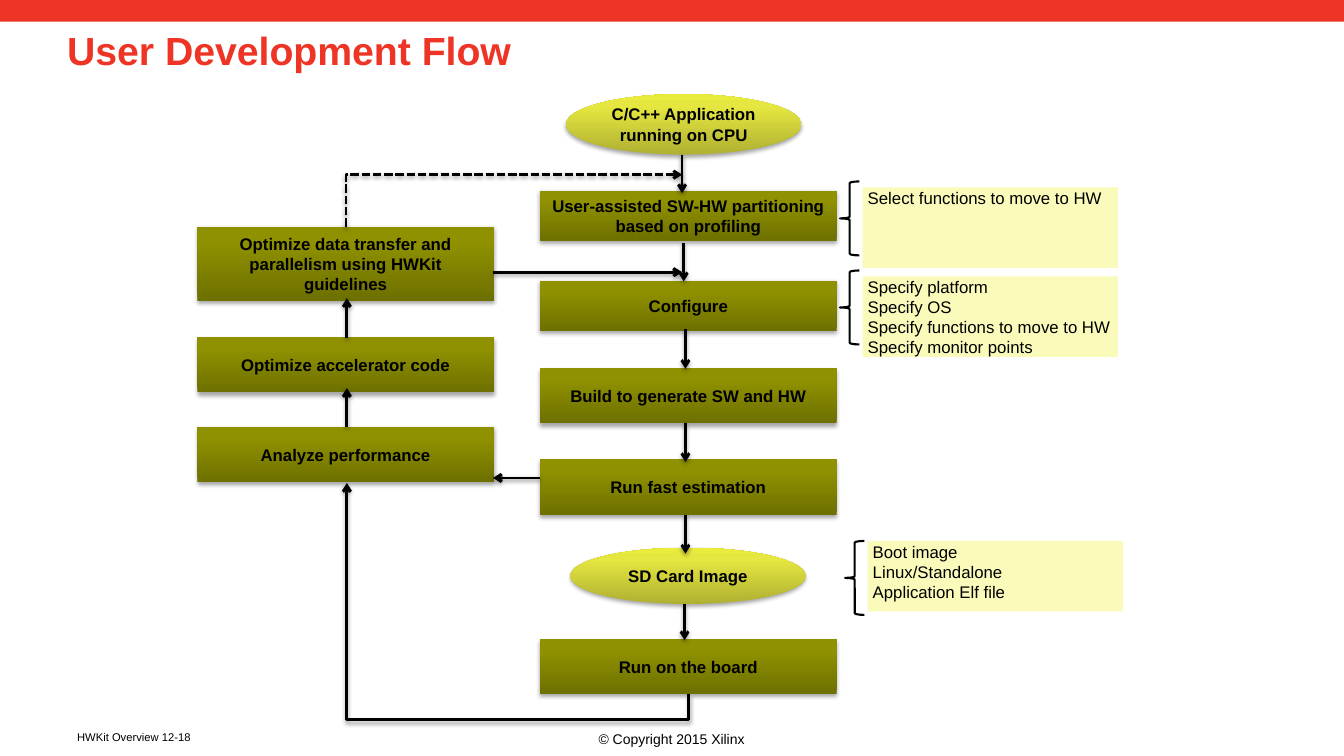
from lxml.etree import SubElement
from pptx import Presentation
from pptx.dml.color import RGBColor
from pptx.enum.dml import MSO_LINE
from pptx.enum.shapes import MSO_CONNECTOR, MSO_SHAPE
from pptx.enum.text import MSO_ANCHOR, PP_ALIGN
from pptx.oxml.ns import qn
from pptx.util import Inches, Pt

COLUMNS, ROWS = 160, 90
CELL = Inches(1) / 12
COLORS = {"red": "EE3424", "black": "000000", "note": "FAFBBB"}
GRADIENTS = {
    "step": [(0, "6E7000"), (80, "8F9100"), (100, "909200")],
    "artifact": [(0, "B0B131"), (80, "E5E640"), (100, "E9EB3D")],
}


def cells(*values):
    """Turn grid cells into slide lengths."""
    return [round(value * CELL) for value in values]


def color(name):
    return RGBColor.from_string(COLORS[name])


class FlowSlide:
    """Draws the flow chart's elements on one slide, measured in grid cells."""

    font = "Arial"

    def __init__(self, slide):
        self.slide = slide

    def set_text(self, frame, text, size, ink="black", bold=False, align=PP_ALIGN.LEFT):
        frame.text = text
        for para in frame.paragraphs:
            para.alignment = align
            for span in para.runs:
                span.font.name = self.font
                span.font.size = Pt(size)
                span.font.bold = bold
                span.font.color.rgb = color(ink)

    def text(self, place, text, size, inset=0.1, anchor=MSO_ANCHOR.TOP, wrap=True, **style):
        frame = self.slide.shapes.add_textbox(*cells(*place)).text_frame
        frame.word_wrap = wrap
        frame.margin_left = Inches(inset)
        frame.vertical_anchor = anchor
        self.set_text(frame, text, size, **style)
        return frame

    def shape(self, kind, place, fill=None):
        shape = self.slide.shapes.add_shape(kind, *cells(*place))
        shape.shadow.inherit = False
        shape.line.fill.background()
        if fill:
            shape.fill.solid()
            shape.fill.fore_color.rgb = color(fill)
        else:
            shape.fill.background()
        return shape

    def drop_shadow(self, properties, alpha, distance):
        effects = properties.find(qn("a:effectLst"))
        if effects is None:
            effects = SubElement(properties, qn("a:effectLst"))
        shadow = SubElement(effects, qn("a:outerShdw"), blurRad=str(Pt(3.1)),
                            dist=str(Pt(distance)), dir="5400000", rotWithShape="0")
        ink = SubElement(shadow, qn("a:srgbClr"), val=COLORS["black"])
        SubElement(ink, qn("a:alpha"), val=str(alpha * 1000))

    def node(self, kind, place, text, gradient):
        node = self.shape(kind, place)
        node.fill.gradient()
        node.fill.gradient_angle = 90
        properties = node._element.spPr
        stops = properties.find(qn("a:gradFill")).find(qn("a:gsLst"))
        for stop in list(stops):
            stops.remove(stop)
        for position, tone in GRADIENTS[gradient]:
            stop = SubElement(stops, qn("a:gs"), pos=str(position * 1000))
            SubElement(stop, qn("a:srgbClr"), val=tone)
        self.drop_shadow(properties, 35, 1.8)
        node.text_frame.word_wrap = True
        node.text_frame.vertical_anchor = MSO_ANCHOR.MIDDLE
        self.set_text(node.text_frame, text, 12, bold=True, align=PP_ALIGN.CENTER)

    def note(self, left, top, height, lines, brace_rise):
        self.shape(MSO_SHAPE.RECTANGLE, (left, top, 30.4, height), "note")
        self.text((left + 0.6, top - 0.55, 30.4, height), "\n".join(lines), 12,
                  inset=0, wrap=False)
        brace = self.shape(MSO_SHAPE.LEFT_BRACE, (left - 2.7, top - brace_rise, 2.3, 8.8))
        brace.line.color.rgb = color("black")
        brace.line.width = Pt(1.5)

    def arrow(self, start, end, kind=MSO_CONNECTOR.STRAIGHT, dashed=False):
        arrow = self.slide.shapes.add_connector(kind, *cells(*start, *end))
        arrow.line.color.rgb = color("black")
        arrow.line.width = Pt(2)
        if dashed:
            arrow.line.dash_style = MSO_LINE.SQUARE_DOT
        properties = arrow._element.spPr
        SubElement(properties.find(qn("a:ln")), qn("a:tailEnd"), type="arrow")
        self.drop_shadow(properties, 38, 1.6)
        return properties

    def bent_arrow(self, start, end, preset, flips, bend=None, dashed=False):
        """Draw an elbow that leaves its start vertically, as a quarter-turned connector."""
        width, height = abs(end[1] - start[1]), abs(end[0] - start[0])
        left = (start[0] + end[0] - width) / 2
        top = (start[1] + end[1] - height) / 2
        properties = self.arrow((left, top), (left + width, top + height),
                                MSO_CONNECTOR.ELBOW, dashed)
        frame = properties.find(qn("a:xfrm"))
        frame.set("rot", "5400000")
        for flip in flips:
            frame.set(flip, "1")
        geometry = properties.find(qn("a:prstGeom"))
        geometry.set("prst", preset)
        if bend is not None:
            SubElement(geometry.find(qn("a:avLst")), qn("a:gd"), name="adj1",
                       fmla=f"val {round(bend * 100000)}")


def main():
    deck = Presentation()
    deck.slide_width, deck.slide_height = cells(COLUMNS, ROWS)
    flow = FlowSlide(deck.slides.add_slide(deck.slide_layouts[6]))

    flow.shape(MSO_SHAPE.RECTANGLE, (0, 0, COLUMNS, 2.6), "red")
    title = flow.text((8, 2.8, 144, 15), "User Development Flow", 28, inset=0,
                      ink="red", bold=True)
    title.paragraphs[0].line_spacing = 0.98
    flow.text((54.6, 86.4, 50.7, 3.2), "© Copyright 2015 Xilinx", 10,
              anchor=MSO_ANCHOR.MIDDLE, align=PP_ALIGN.CENTER)
    flow.text((8, 86.3, 19.8, 3.7), "HWKit Overview 12-18", 8)

    main_left, loop_left, step_width = 64.3, 23.5, 35.3
    steps = [
        (main_left, 22.7, 6, "User-assisted SW-HW partitioning based on profiling"),
        (main_left, 33.4, 6, "Configure"),
        (main_left, 43.8, 6.6, "Build to generate SW and HW"),
        (main_left, 54.7, 6.6, "Run fast estimation"),
        (main_left, 76.1, 6.5, "Run on the board"),
        (loop_left, 27, 8.8, "Optimize data transfer and parallelism using HWKit guidelines"),
        (loop_left, 40.1, 6.6, "Optimize accelerator code"),
        (loop_left, 50.8, 6.6, "Analyze performance"),
    ]
    for left, top, height, text in steps:
        flow.node(MSO_SHAPE.RECTANGLE, (left, top, step_width, height), text, "step")
    artifacts = [
        (67.4, 11.2, 7.2, "C/C++ Application running on CPU"),
        (67.9, 65.2, 6.7, "SD Card Image"),
    ]
    for left, top, height, text in artifacts:
        flow.node(MSO_SHAPE.OVAL, (left, top, 28, height), text, "artifact")

    notes = [
        (102.7, 22.3, 9.6, ["Select functions to move to HW"], 0.7),
        (102.7, 32.9, 9.6, ["Specify platform", "Specify OS",
                            "Specify functions to move to HW", "Specify monitor points"], 0.7),
        (103.3, 64.4, 8.4, ["Boot image", "Linux/Standalone", "Application Elf file"], 0),
    ]
    for note in notes:
        flow.note(*note)

    vertical_arrows = [
        (81.2, 18.4, 23), (81.4, 28.9, 33.5), (81.6, 39.2, 43.9), (81.6, 50.4, 55),
        (81.6, 61.3, 65.9), (81.5, 71.9, 76.2), (41.3, 40.2, 35.5), (41.3, 50.8, 46.2),
    ]
    for column, start, end in vertical_arrows:
        flow.arrow((column, start), (column, end))
    for row, start, end in [(32.4, 58.7, 81.2), (56.9, 64.3, 58.7)]:
        flow.arrow((start, row), (end, row))
    flow.bent_arrow((82, 82.6), (41.3, 57.5), "bentConnector3", ["flipH"], bend=-0.12)
    flow.bent_arrow((41.2, 27), (81.2, 20.8), "bentConnector2", ["flipH", "flipV"], dashed=True)

    deck.save("out.pptx")


if __name__ == "__main__":
    main()
